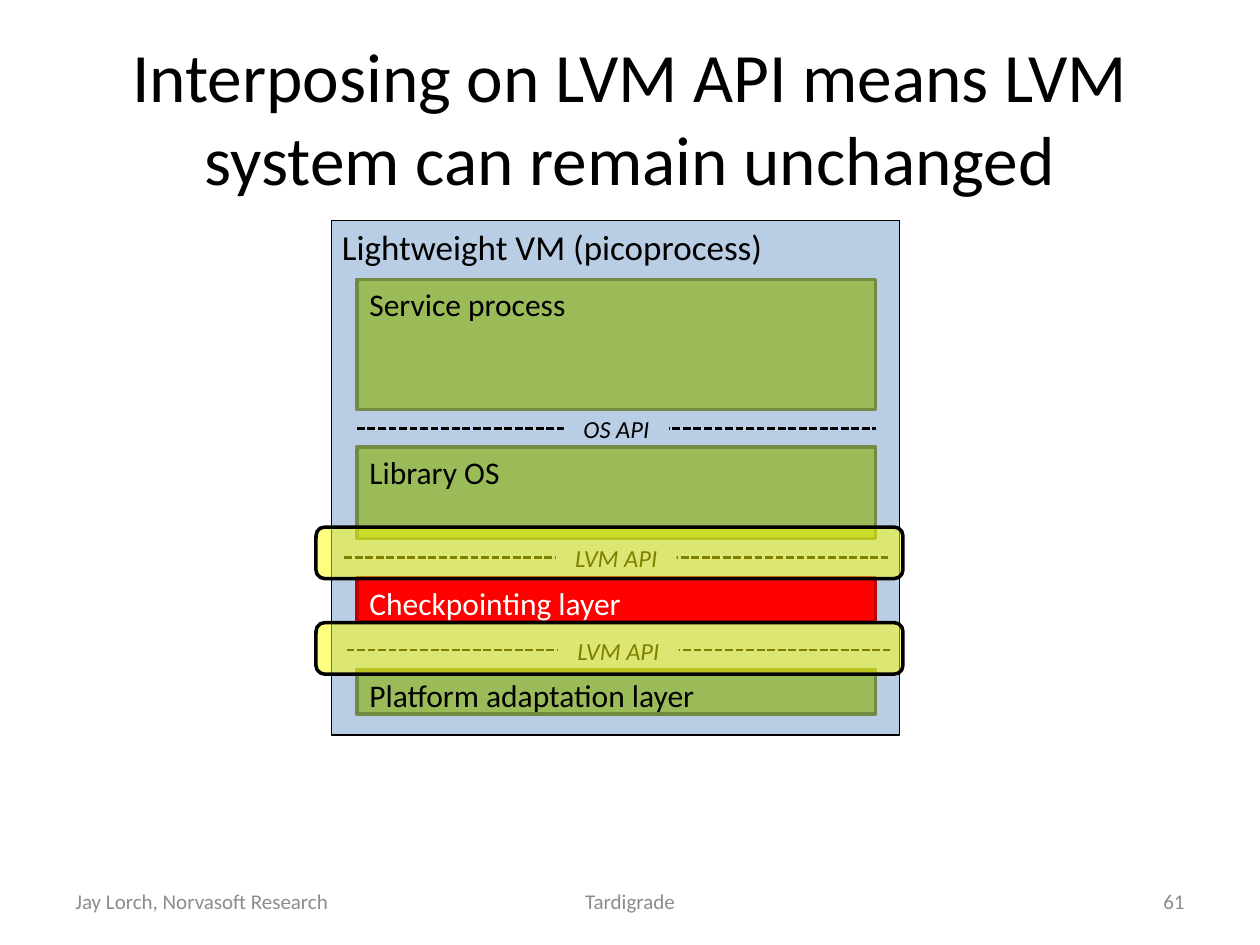
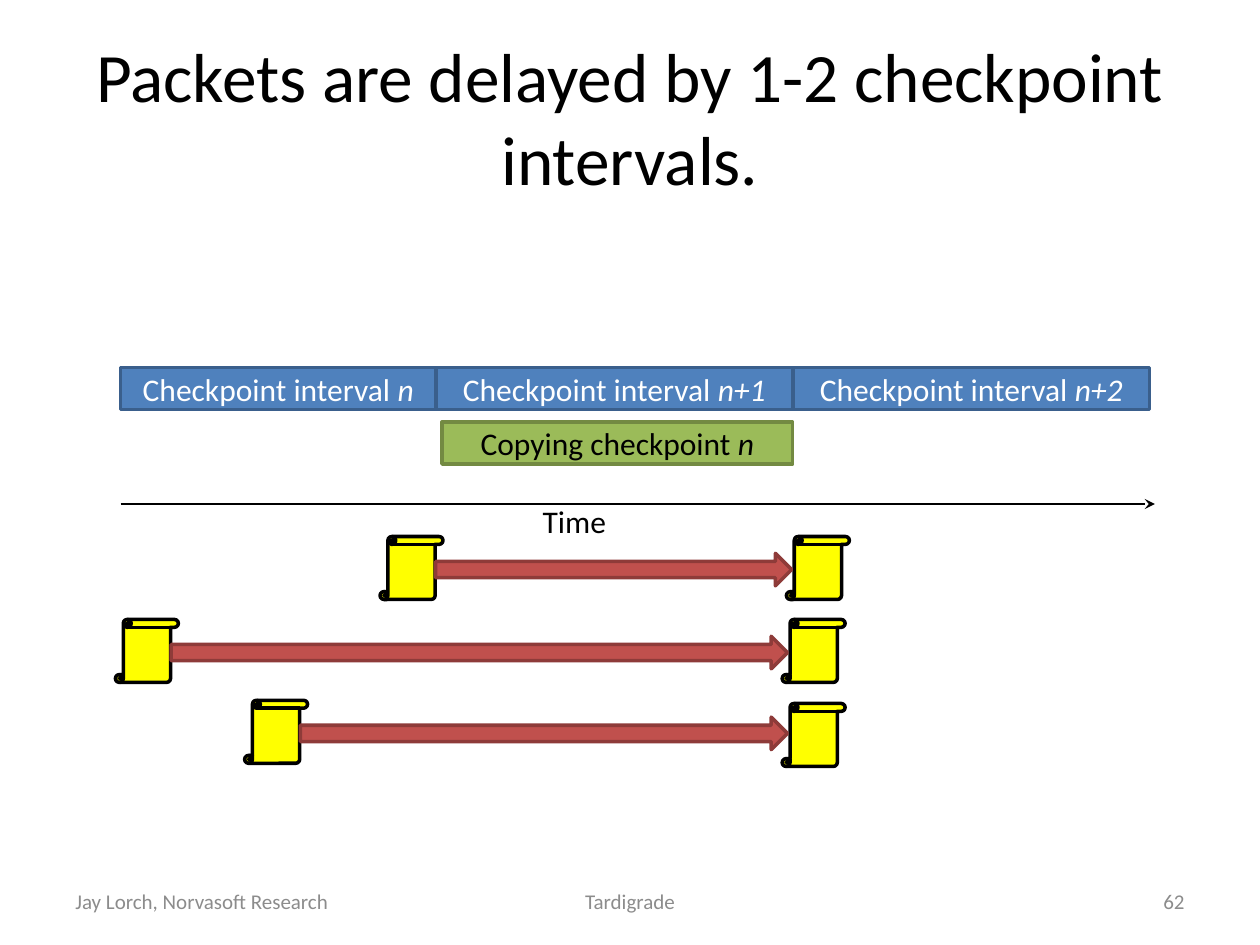
import pptx
import pptx.util
import pptx.dml.color
import pptx.enum.dml
import pptx.enum.shapes
import pptx.enum.text
import pptx.oxml
import pptx.oxml.ns
import lxml.etree

RGBColor = pptx.dml.color.RGBColor
MSO_SHAPE = pptx.enum.shapes.MSO_SHAPE
ALIGN = pptx.enum.text.PP_ALIGN
ANCHOR = pptx.enum.text.MSO_ANCHOR

BLACK = RGBColor(0x00, 0x00, 0x00)
WHITE = RGBColor(0xFF, 0xFF, 0xFF)
GRAY = RGBColor(0x8C, 0x8C, 0x8C)
PALE_BLUE = RGBColor(0xB9, 0xCD, 0xE5)
BLUE = RGBColor(0x4F, 0x81, 0xBD)
DARK_BLUE = RGBColor(0x3A, 0x5F, 0x8C)
GREEN = RGBColor(0x9B, 0xBB, 0x59)
DARK_GREEN = RGBColor(0x73, 0x8A, 0x42)
RED = RGBColor(0xFF, 0x00, 0x00)
DARK_RED = RGBColor(0xC0, 0x00, 0x00)
BRICK = RGBColor(0xC0, 0x50, 0x4D)
DARK_BRICK = RGBColor(0x8E, 0x3B, 0x39)
YELLOW = RGBColor(0xFF, 0xFF, 0x00)
FONT = "Calibri"

prs = pptx.Presentation()
prs.slide_width = pptx.util.Inches(10)
prs.slide_height = pptx.util.Inches(7.5)
COL = prs.slide_width / 120
ROW = prs.slide_height / 90


def add_box(slide, at, kind=MSO_SHAPE.RECTANGLE, fill=None, line=None, width=2,
            text="", italic="", size=18, color=BLACK, align=ALIGN.LEFT,
            anchor=ANCHOR.TOP):
    """Add a shape at (column, row, columns, rows); italic follows text."""
    x, y, w, h = at
    sp = slide.shapes.add_shape(kind, int(x * COL), int(y * ROW), int(w * COL), int(h * ROW))
    sp.shadow.inherit = False
    for paint, value in ((sp.fill, fill), (sp.line.fill, line)):
        if value is None:
            paint.background()
        else:
            paint.solid()
            paint.fore_color.rgb = value
    if line is not None:
        sp.line.width = pptx.util.Pt(width)
    tf = sp.text_frame
    tf.word_wrap = True
    tf.vertical_anchor = anchor
    p = tf.paragraphs[0]
    p.alignment = align
    for part, slanted in ((text, False), (italic, True)):
        if part:
            r = p.add_run()
            r.text = part
            r.font.name = FONT
            r.font.size = pptx.util.Pt(size)
            r.font.italic = slanted
            r.font.color.rgb = color
    return sp


def add_line(slide, x1, x2, y, width):
    """Add a level black line from column x1 to column x2 on row y."""
    cxn = slide.shapes.add_connector(pptx.enum.shapes.MSO_CONNECTOR.STRAIGHT,
                                     int(x1 * COL), int(y * ROW), int(x2 * COL), int(y * ROW))
    cxn.line.color.rgb = BLACK
    cxn.line.width = pptx.util.Pt(width)
    lxml.etree.SubElement(cxn._element.spPr, pptx.oxml.ns.qn("a:effectLst"))
    return cxn


# Titles and footers of both slides
titles = ["Interposing on LVM API means LVM system can remain unchanged",
          "Packets are delayed by 1-2 checkpoint intervals."]
for number, title in enumerate(titles, start=61):
    s = prs.slides.add_slide(prs.slide_layouts[5])
    sp = s.shapes.title
    sp.left, sp.top = int(6 * COL), int(3.6 * ROW)
    sp.width, sp.height = int(108 * COL), int(15 * ROW)
    tf = sp.text_frame
    tf.text = title
    tf.word_wrap = True
    tf.auto_size = pptx.enum.text.MSO_AUTO_SIZE.NONE
    tf.vertical_anchor = ANCHOR.MIDDLE
    p = tf.paragraphs[0]
    p.alignment = ALIGN.CENTER
    r = p.runs[0]
    r.font.name = FONT
    r.font.size = pptx.util.Pt(39.6)
    r.font.color.rgb = BLACK
    for x, w, text, align in ((6, 28, "Jay Lorch, Norvasoft Research", ALIGN.LEFT),
                              (41, 38, "Tardigrade", ALIGN.CENTER),
                              (86, 28, str(number), ALIGN.RIGHT)):
        add_box(s, (x, 83.4, w, 4.8), text=text, size=12, color=GRAY, align=align,
                anchor=ANCHOR.MIDDLE)

stack_slide, timeline_slide = prs.slides

# Layers of the lightweight VM
s = stack_slide
vm = add_box(s, (31.6, 21, 54.1, 49), fill=PALE_BLUE, line=BLACK, width=0.75,
             text="Lightweight VM (picoprocess)", size=20)
tf = vm.text_frame
tf.margin_left = tf.margin_right = pptx.util.Inches(0.08)
tf.margin_top = tf.margin_bottom = pptx.util.Inches(0.04)

for y, h, text, fill, line, color in (
        (26.6, 12.4, "Service process", GREEN, DARK_GREEN, BLACK),
        (42.6, 8.7, "Library OS", GREEN, DARK_GREEN, BLACK),
        (55, 4.2, "Checkpointing layer", RED, DARK_RED, WHITE),
        (63.8, 4.2, "Platform adaptation layer", GREEN, DARK_GREEN, BLACK)):
    add_box(s, (34, y, 49.4, h), fill=fill, line=line, text=text, color=color)

for x1, x2, y, label, label_width, label_height in (
        (34, 83.4, 40.8, "OS API", 10, 2.8),
        (32.8, 84.6, 53.1, "LVM API", 11.5, 1.9),
        (33, 84.8, 61.9, "LVM API", 11.5, 1.9)):
    cxn = add_line(s, x1, x2, y, 1.5)
    cxn.line.dash_style = pptx.enum.dml.MSO_LINE.SQUARE_DOT
    add_box(s, ((x1 + x2 - label_width) / 2, y + 0.05 - label_height / 2,
                label_width, label_height),
            fill=PALE_BLUE, italic=label, size=14, align=ALIGN.CENTER, anchor=ANCHOR.MIDDLE)

for y in (50.2, 59.3):
    sp = add_box(s, (30.1, y, 55.9, 4.9), MSO_SHAPE.ROUNDED_RECTANGLE, YELLOW, BLACK)
    clr = sp._element.xpath("./p:spPr/a:solidFill/a:srgbClr")[0]
    lxml.etree.SubElement(clr, pptx.oxml.ns.qn("a:alpha")).set("val", "50000")

# Checkpoint intervals along the time axis
s = timeline_slide
for x, y, w, text, italic, fill, line, color in (
        (11.5, 35, 30, "Checkpoint interval ", "n", BLUE, DARK_BLUE, WHITE),
        (41.5, 35, 34, "Checkpoint interval ", "n+1", BLUE, DARK_BLUE, WHITE),
        (75.5, 35, 34, "Checkpoint interval ", "n+2", BLUE, DARK_BLUE, WHITE),
        (42.1, 40.2, 33.4, "Copying checkpoint ", "n", GREEN, DARK_GREEN, BLACK)):
    add_box(s, (x, y, w, 4), fill=fill, line=line, text=text, italic=italic,
            color=color, align=ALIGN.CENTER, anchor=ANCHOR.MIDDLE)

axis = add_line(s, 11.5, 110, 48, 0.75)
ln = axis._element.xpath("./p:spPr/a:ln")[0]
lxml.etree.SubElement(ln, pptx.oxml.ns.qn("a:tailEnd")).set("type", "stealth")
time_label = add_box(s, (50.5, 47.2, 8.5, 4.8), text="Time")
time_label.text_frame.word_wrap = False

# Packets held until their checkpoint has been copied
for sent, released, sent_row, released_row in (
        (36.2, 74.9, 51.1, 51.1), (11, 74.5, 59, 59), (23.3, 74.5, 66.7, 67)):
    for x, y in ((sent, sent_row), (released, released_row)):
        add_box(s, (x, y, 6, 6), MSO_SHAPE.VERTICAL_SCROLL, YELLOW, BLACK)
    start, end = sent + 5.3, released + 0.5
    add_box(s, (start, sent_row + 1.6, end - start, 3.1), MSO_SHAPE.RIGHT_ARROW,
            BRICK, DARK_BRICK)

prs.save("out.pptx")
